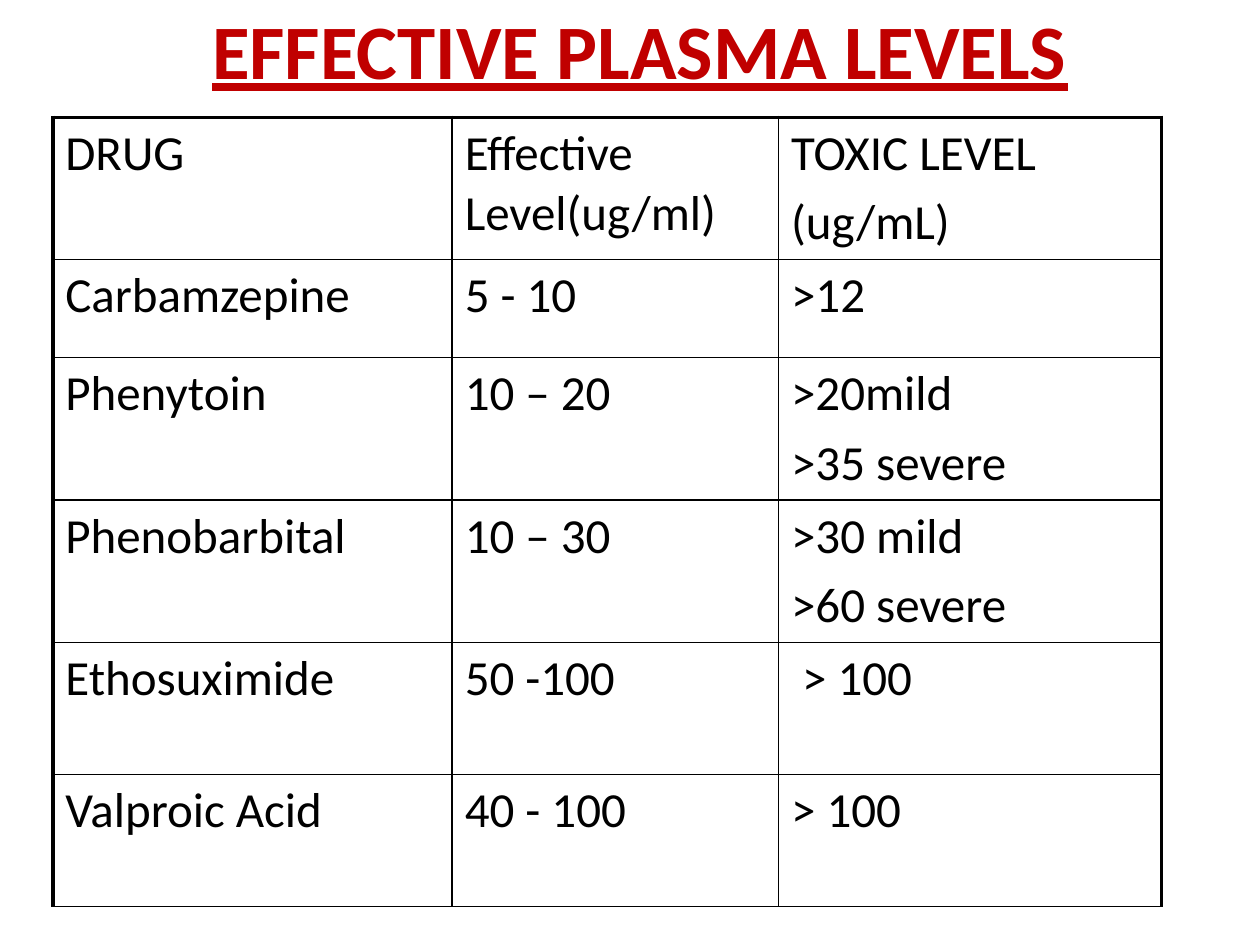
import pptx
import pptx.dml.color
import pptx.enum.text
import pptx.oxml
import pptx.oxml.ns
import pptx.util
from dataclasses import dataclass

Pt = pptx.util.Pt
Color = pptx.dml.color.RGBColor
Enum = pptx.enum.text


@dataclass(frozen=True)
class Theme:
    face: str = "Calibri"
    head: Color = Color(0xC0, 0x00, 0x00)
    ink: Color = Color(0x00, 0x00, 0x00)
    head_size: float = 44
    body_size: float = 28
    gap: float = 5.6
    thin: float = 1
    thick: float = 2.25


@dataclass(frozen=True)
class Drug:
    name: str
    level: str
    toxic: str
    height: float


THEME = Theme()
WIDTHS = (228.2, 186.5, 218.9)
ROWS = (
    Drug("DRUG", "Effective Level(ug/ml)", "TOXIC LEVEL\n(ug/mL)", 81.4),
    Drug("Carbamzepine", "5 - 10", ">12", 56),
    Drug("Phenytoin", "10 – 20", ">20mild\n>35 severe", 81.4),
    Drug("Phenobarbital", "10 – 30", ">30 mild\n>60 severe", 81.4),
    Drug("Ethosuximide", "50 -100", " > 100", 75.4),
    Drug("Valproic Acid", "40 - 100", "> 100", 75.4),
)


def apply(item, form: dict) -> None:
    for key, value in form.items():
        setattr(item, key, value)


def style(font, size: float, color: Color, **more) -> None:
    apply(font, {"name": THEME.face, "size": Pt(size), **more})
    font.color.rgb = color


def border(cell, sides: dict) -> None:
    # Border lines come before the fill in the cell properties
    props = cell._tc.get_or_add_tcPr()
    for spot, (side, width) in enumerate(sides.items()):
        line = pptx.oxml.parse_xml(
            f'<a:ln{side} {pptx.oxml.ns.nsdecls("a")} w="{Pt(width)}">'
            f'<a:solidFill><a:srgbClr val="{THEME.ink}"/></a:solidFill>'
            f'</a:ln{side}>')
        props.insert(spot, line)


def fill_cell(cell, text: str, sides: dict) -> None:
    cell.text = text
    cell.fill.background()
    for para in cell.text_frame.paragraphs:
        para.space_before = Pt(THEME.gap)
        style(para.runs[0].font, THEME.body_size, THEME.ink, bold=False)
    border(cell, sides)


def draw_title(slide, text: str) -> None:
    title = slide.shapes.title
    apply(title, {"left": Pt(44.6), "top": Pt(-28), "width": Pt(642.2),
                  "height": Pt(111.6)})
    frame = title.text_frame
    frame.text = text
    apply(frame, {"word_wrap": True, "auto_size": Enum.MSO_AUTO_SIZE.NONE,
                  "vertical_anchor": Enum.MSO_ANCHOR.MIDDLE})
    para = frame.paragraphs[0]
    para.alignment = Enum.PP_ALIGN.CENTER
    style(para.runs[0].font, THEME.head_size, THEME.head,
          bold=True, underline=True)


def draw_table(slide, rows: tuple) -> None:
    high = sum(row.height for row in rows)
    table = slide.shapes.add_table(
        len(rows), len(WIDTHS), Pt(30.2), Pt(67),
        Pt(sum(WIDTHS)), Pt(high)).table
    apply(table, {"first_row": False, "horz_banding": False})
    for col, width in zip(table.columns, WIDTHS):
        col.width = Pt(width)
    last = len(WIDTHS) - 1
    for y, row in enumerate(rows):
        table.rows[y].height = Pt(row.height)
        for x, text in enumerate((row.name, row.level, row.toxic)):
            # Thick lines on the left, right and top edges
            sides = {
                "L": THEME.thick if x == 0 else THEME.thin,
                "R": THEME.thick if x == last else THEME.thin,
                "T": THEME.thick if y == 0 else THEME.thin,
                "B": THEME.thin,
            }
            fill_cell(table.cell(y, x), text, sides)


def main() -> None:
    deck = pptx.Presentation()
    apply(deck, {"slide_width": Pt(720), "slide_height": Pt(540)})
    slide = deck.slides.add_slide(deck.slide_layouts[5])
    draw_title(slide, "EFFECTIVE PLASMA LEVELS")
    draw_table(slide, ROWS)
    deck.save("out.pptx")


if __name__ == "__main__":
    main()
